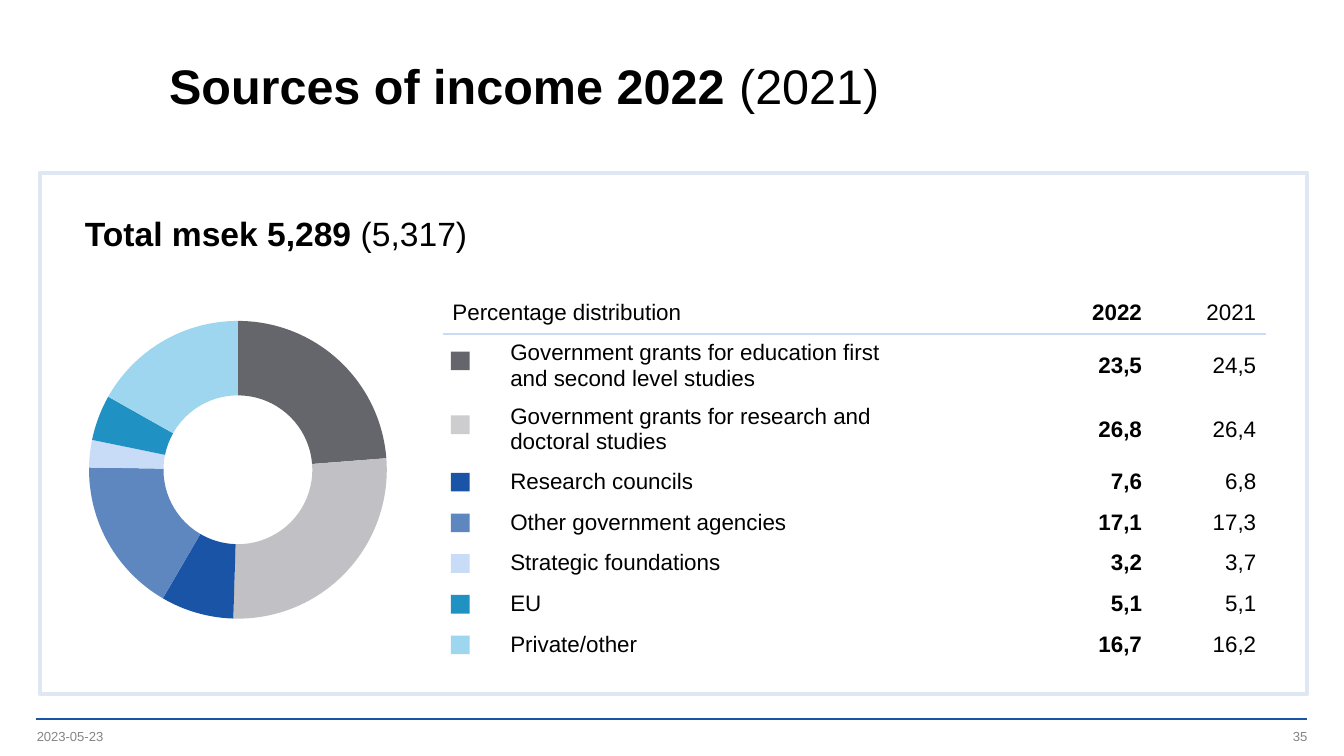
from dataclasses import dataclass
from itertools import accumulate

from lxml.etree import SubElement
from pptx import Presentation
from pptx.chart.data import CategoryChartData
from pptx.dml.color import RGBColor as RGB
from pptx.enum.chart import XL_CHART_TYPE as ChartType
from pptx.enum.shapes import MSO_CONNECTOR as Connector, MSO_SHAPE as Shape
from pptx.enum.text import MSO_ANCHOR as Anchor, PP_ALIGN as Align
from pptx.oxml import parse_xml
from pptx.oxml.ns import nsdecls, qn
from pptx.util import Pt


@dataclass(frozen=True)
class Theme:
    """Colours and type sizes of the slide."""
    font: str = "Arial"
    ink: str = "000000"
    muted: str = "848489"
    rule: str = "1954A6"
    frame: str = "DFE7F2"
    divider: str = "C8DBF7"
    title: float = 26
    heading: float = 18
    body: float = 12
    chart: float = 10
    footer: float = 7


@dataclass(frozen=True)
class Source:
    """One source of income with its shares and colours."""
    label: str
    share_2022: float
    share_2021: float
    slice_colour: str
    key_colour: str = ""
    key_opacity: int = 100


SOURCES = [
    Source("Government grants for education first \vand second level studies", 23.5, 24.5, "65656C"),
    Source("Government grants for research and \vdoctoral studies", 26.8, 26.4, "C1C1C5", "838389", 40),
    Source("Research councils", 7.6, 6.8, "1954A6"),
    Source("Other government agencies", 17.1, 17.3, "5E87C0"),
    Source("Strategic foundations", 3.2, 3.7, "C8DBF7"),
    Source("EU", 5.1, 5.1, "2091C3"),
    Source("Private/other", 16.7, 16.2, "9ED6EF"),
]
COLUMNS = [31, 287.2, 61.2, 61.2]
ROWS = [22.2] + [34.2 if "\v" in source.label else 21.8 for source in SOURCES]
TABLE_LEFT, TABLE_TOP = 237.4, 156.6
KEY_SIZE = 10
PLAIN_TABLE = "{2D5ABB26-0587-4C30-8999-92F81FD0307C}"


def points(*lengths):
    """Convert numbers to lengths in points."""
    return [Pt(length) for length in lengths]


def decimal_comma(share):
    """Format a share with one decimal after a comma."""
    return f"{share:.1f}".replace(".", ",")


class SlideBuilder:
    """Draw styled elements on the current slide."""

    def __init__(self, slide, theme):
        self.slide, self.theme = slide, theme

    def style(self, font, size, colour=None):
        """Apply the theme's typeface with a size and colour."""
        font.name, font.size = self.theme.font, Pt(size)
        font.color.rgb = RGB.from_string(colour or self.theme.ink)

    def text(self, box, runs, size, colour=None, insets=(7.2, 3.6, 7.2, 3.6), align=Align.LEFT, spacing=None):
        """Add a text box from (wording, bold) runs."""
        frame = self.slide.shapes.add_textbox(*points(*box)).text_frame
        frame.word_wrap, frame.vertical_anchor = True, Anchor.MIDDLE
        frame.margin_left, frame.margin_top, frame.margin_right, frame.margin_bottom = points(*insets)
        paragraph = frame.paragraphs[0]
        paragraph.alignment = align
        if spacing:
            paragraph.line_spacing = Pt(spacing)
        self.style(paragraph.font, size, colour)
        for wording, bold in runs:
            run = paragraph.add_run()
            run.text, run.font.bold = wording, bold

    def rectangle(self, box, fill=None, opacity=100, outline=None):
        """Add a filled or outlined rectangle."""
        rectangle = self.slide.shapes.add_shape(Shape.RECTANGLE, *points(*box))
        rectangle.shadow.inherit = False
        if fill:
            rectangle.fill.solid()
            rectangle.fill.fore_color.rgb = RGB.from_string(fill)
        else:
            rectangle.fill.background()
        if opacity < 100:
            colour = rectangle._element.spPr.find(f"{qn('a:solidFill')}/{qn('a:srgbClr')}")
            SubElement(colour, qn("a:alpha"), val=str(opacity * 1000))
        if outline:
            rectangle.line.color.rgb, rectangle.line.width = RGB.from_string(outline), Pt(2)
        else:
            rectangle.line.fill.background()

    def rule(self, left, right, top):
        """Add a horizontal line."""
        rule = self.slide.shapes.add_connector(Connector.STRAIGHT, *points(left, top, right, top))
        rule.line.color.rgb, rule.line.width = RGB.from_string(self.theme.rule), Pt(1)
        SubElement(rule._element.spPr, qn("a:effectLst"))

    def doughnut(self, box, sources):
        """Add a doughnut chart of the rounded 2022 shares."""
        shares = CategoryChartData()
        shares.categories = [str(number) for number in range(1, len(sources) + 1)]
        shares.add_series("Series 1", [round(source.share_2022) for source in sources])
        chart = self.slide.shapes.add_chart(ChartType.DOUGHNUT, *points(*box), shares).chart
        chart.has_legend = chart.has_title = False
        self.style(chart.font, self.theme.chart)
        plot = chart.plots[0]
        plot.vary_by_categories = True
        for index, source in enumerate(sources):
            fill = plot.series[0].points[index].format.fill
            fill.solid()
            fill.fore_color.rgb = RGB.from_string(source.slice_colour)
        area = chart._chartSpace.find(f".//{qn('c:plotArea')}")
        area.find(f".//{qn('c:holeSize')}").set("val", "65")
        for layout in area.findall(qn("c:layout")):
            area.remove(layout)
        area.insert(0, parse_xml(
            f'<c:layout {nsdecls("c")}><c:manualLayout><c:layoutTarget val="inner"/>'
            '<c:xMode val="edge"/><c:yMode val="edge"/><c:x val="0.15"/><c:y val="0.05"/>'
            '<c:w val="0.7"/><c:h val="0.89"/></c:manualLayout></c:layout>'))

    def cell(self, cell, wording, align, bold, divided):
        """Fill one table cell, with a divider below if asked."""
        cell.fill.background()
        cell.vertical_anchor = Anchor.MIDDLE
        cell.margin_left = cell.margin_right = Pt(5)
        cell.margin_top = cell.margin_bottom = Pt(2.7)
        paragraph = cell.text_frame.paragraphs[0]
        paragraph.text, paragraph.alignment = wording, align
        self.style(paragraph.font, self.theme.body)
        paragraph.font.bold = bold
        if not wording:
            SubElement(paragraph._p, qn("a:endParaRPr"), sz=str(self.theme.body * 100))
        if divided:
            cell._tc.tcPr.insert(0, parse_xml(
                f'<a:lnB {nsdecls("a")} w="12700"><a:solidFill>'
                f'<a:srgbClr val="{self.theme.divider}"/></a:solidFill></a:lnB>'))

    def table(self, left, top, columns, heights, records):
        """Add a plain table whose first row is the header."""
        size = points(left, top, sum(columns), sum(heights))
        table = self.slide.shapes.add_table(len(heights), len(columns), *size).table
        table.first_row = table.horz_banding = False
        table._tbl.tblPr.find(qn("a:tableStyleId")).text = PLAIN_TABLE
        for column, width in zip(table.columns, columns):
            column.width = Pt(width)
        table.cell(0, 0).merge(table.cell(0, 1))
        for row, (height, record) in enumerate(zip(heights, records)):
            table.rows[row].height = Pt(height)
            for column, wording in enumerate(record):
                align = Align.RIGHT if column > 1 else Align.LEFT
                self.cell(table.cell(row, column), wording, align, column == 2, row == 0)


def main():
    """Build and save the slide."""
    theme = Theme()
    deck = Presentation()
    deck.slide_width, deck.slide_height = points(720, 405)
    builder = SlideBuilder(deck.slides.add_slide(deck.slide_layouts[6]), theme)

    builder.rule(19.5, 700.2, 385)
    builder.doughnut((11.5, 163, 232, 179.3), SOURCES)
    records = [("Percentage distribution", "", "2022", "2021")]
    records += [("", source.label, decimal_comma(source.share_2022), decimal_comma(source.share_2021))
                for source in SOURCES]
    builder.table(TABLE_LEFT, TABLE_TOP, COLUMNS, ROWS, records)
    row_tops = accumulate(ROWS[:-1], initial=TABLE_TOP)
    next(row_tops)
    for source, row_top, height in zip(SOURCES, row_tops, ROWS[1:]):
        key = (TABLE_LEFT + 4.2, row_top + 0.28 * height, KEY_SIZE, KEY_SIZE)
        builder.rectangle(key, source.key_colour or source.slice_colour, source.key_opacity)

    builder.text((83.5, 19.7, 595, 53.3), [("Sources of income 2022 ", True), ("(2021)", False)],
                 theme.title, spacing=30)
    for left, wording, align in [(19.7, "2023-05-23", Align.LEFT), (538.3, "35", Align.RIGHT)]:
        builder.text((left, 389.5, 162, 9.4), [(wording, False)], theme.footer, theme.muted, (0, 0, 0, 0), align)
    builder.rectangle((21.4, 92.5, 679, 279.4), outline=theme.frame)
    builder.text((23.2, 105.5, 300, 39), [("Total msek 5,289 ", True), ("(5,317)", False)],
                 theme.heading, insets=(22.3, 3.6, 7.2, 3.6))
    deck.save("out.pptx")


if __name__ == "__main__":
    main()
